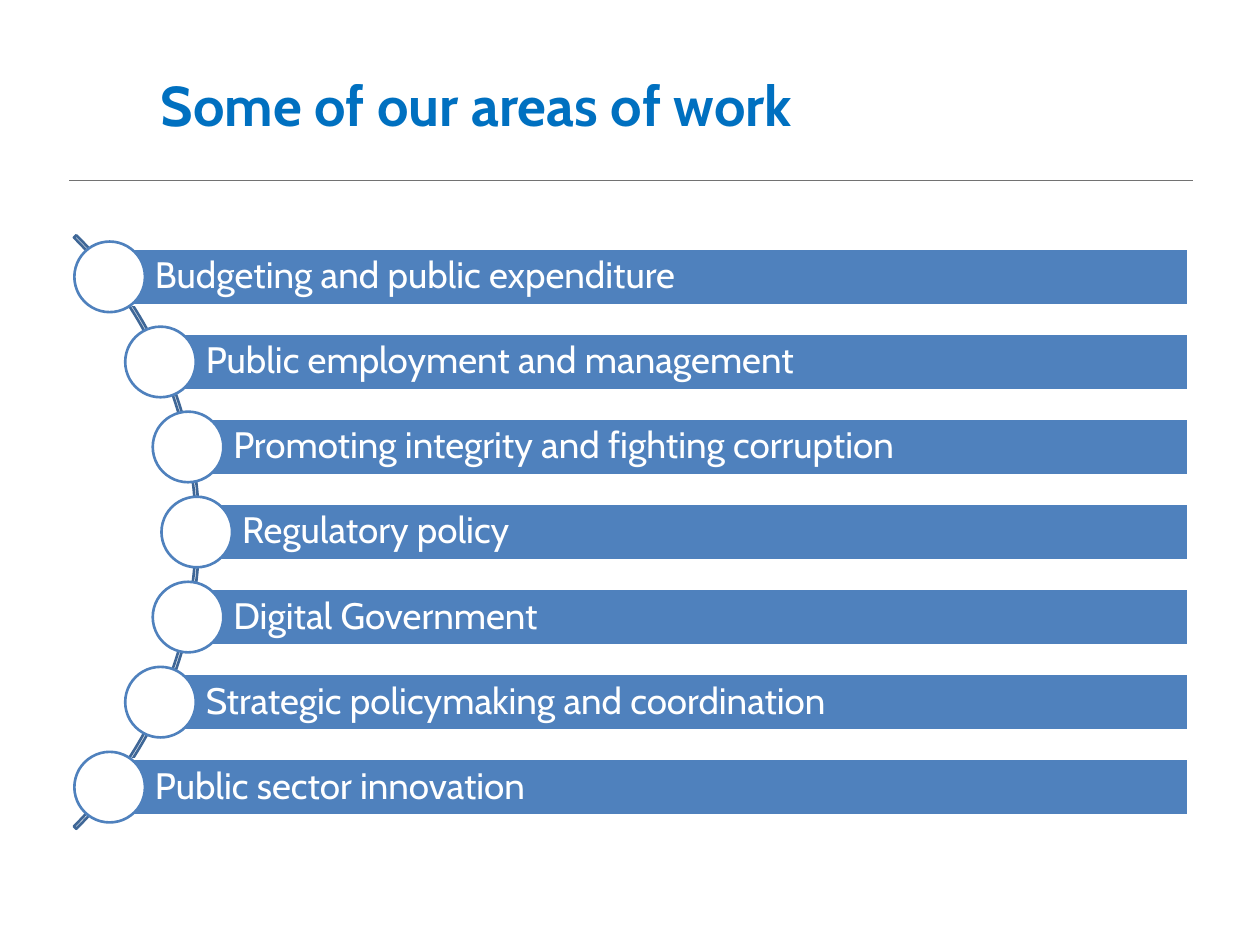
import math
import pptx
import pptx.util
import pptx.dml.color
import pptx.enum.shapes
import pptx.enum.text
import pptx.oxml

Inches, Pt = pptx.util.Inches, pptx.util.Pt
Shape = pptx.enum.shapes.MSO_SHAPE
Align, Anchor = pptx.enum.text.PP_ALIGN, pptx.enum.text.MSO_ANCHOR
FONT = "Cabin"
WIDE, HIGH = 10, 7.5
INK = {"title": "0070C0", "bar": "4F81BD", "arc": "3F6797",
       "rule": "727272", "white": "FFFFFF"}
AREAS = [
    "Budgeting and public expenditure",
    "Public employment and management",
    "Promoting integrity and fighting corruption",
    "Regulatory policy",
    "Digital Government",
    "Strategic policymaking and coordination",
    "Public sector innovation",
]


def color(name):
    return pptx.dml.color.RGBColor.from_string(INK[name])


def write(para, text, size, ink, bold=False):
    run = para.add_run()
    run.text = text
    run.font.name = FONT
    run.font.size = Pt(size)
    run.font.bold = bold
    run.font.color.rgb = color(ink)


def draw(group, kind, box, fill, line):
    shape = group.shapes.add_shape(kind, *map(Inches, box))
    shape.shadow.inherit = False
    if fill:
        shape.fill.solid()
        shape.fill.fore_color.rgb = color(fill)
    else:
        shape.fill.background()
    shape.line.color.rgb = color(line)
    shape.line.width = Pt(1.5)
    return shape


def header(slide, box):
    left, top, width, height = box
    title = slide.shapes.title
    title.left, title.top = Inches(left + 0.07 * width), Inches(top)
    title.width, title.height = Inches(0.91 * width), Inches(0.96 * height)
    frame = title.text_frame
    frame.vertical_anchor = Anchor.MIDDLE
    para = frame.paragraphs[0]
    para.alignment = Align.LEFT
    write(para, "Some of our areas of work", 32, "title", True)
    base = Inches(top + height)
    rule = slide.shapes.add_connector(
        pptx.enum.shapes.MSO_CONNECTOR.STRAIGHT,
        Inches(left), base, Inches(left + width), base)
    rule.line.color.rgb = color("rule")
    rule.line.width = Pt(0.5)
    props = rule.element.spPr
    props.append(props.makeelement(pptx.oxml.ns.qn("a:effectLst"), {}))


def label(bar, text):
    frame = bar.text_frame
    frame.word_wrap = True
    frame.vertical_anchor = Anchor.MIDDLE
    frame.margin_left = Inches(0.36)
    frame.margin_top = frame.margin_right = frame.margin_bottom = Inches(0.06)
    para = frame.paragraphs[0]
    para.alignment = Align.LEFT
    para.line_spacing = 0.9
    write(para, text, 21, "white")


def areas(slide, box, items):
    left, top, width, height = box
    row = height / len(items)
    thick, dot = row * 2 / 3, row * 0.83
    mid = top + height / 2
    radius = height * 0.705
    hub = left - height * 0.493
    group = slide.shapes.add_group_shape()
    arc = draw(group, Shape.BLOCK_ARC,
               (hub - radius, mid - radius, 2 * radius, 2 * radius),
               None, "arc")
    for place, value in enumerate((189, 27, 0.004)):
        arc.adjustments[place] = value
    for place, text in enumerate(items):
        y = top + (place + 0.5) * row
        x = hub + math.sqrt((radius - 0.02) ** 2 - (y - mid) ** 2)
        bar = draw(group, Shape.RECTANGLE,
                   (x, y - thick / 2, left + width - x, thick),
                   "bar", "white")
        label(bar, text)
        draw(group, Shape.OVAL, (x - dot / 2, y - dot / 2, dot, dot),
             "white", "bar")


def main():
    deck = pptx.Presentation()
    deck.slide_width, deck.slide_height = Inches(WIDE), Inches(HIGH)
    slide = deck.slides.add_slide(deck.slide_layouts[5])
    header(slide, (0.055 * WIDE, 0.035 * HIGH, 0.892 * WIDE, 0.156 * HIGH))
    areas(slide, (0.058 * WIDE, 0.248 * HIGH, 0.885 * WIDE, 0.63 * HIGH), AREAS)
    deck.save("out.pptx")


if __name__ == "__main__":
    main()
